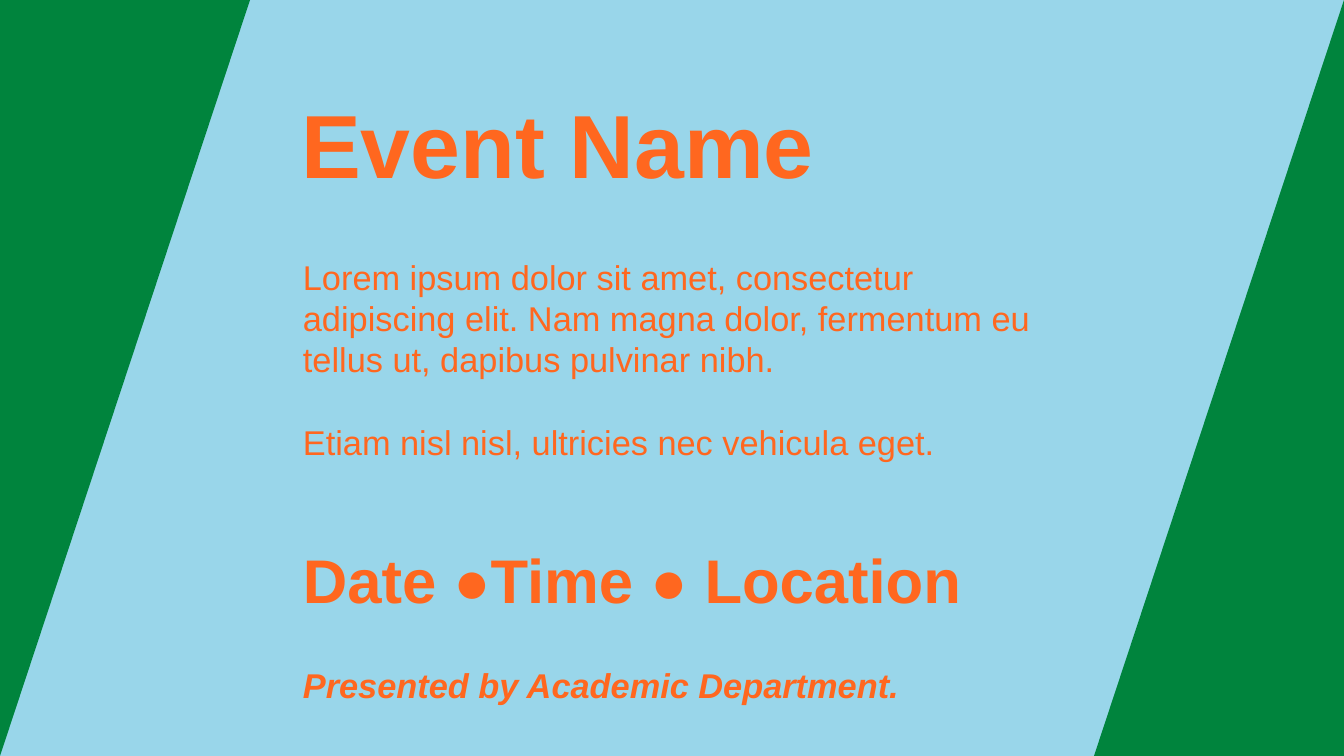
from dataclasses import dataclass

from pptx import Presentation
from pptx.dml.color import RGBColor
from pptx.enum.shapes import MSO_SHAPE
from pptx.enum.text import MSO_AUTO_SIZE
from pptx.util import Cm, Pt

TRIANGLE = MSO_SHAPE.RIGHT_TRIANGLE
GROW = MSO_AUTO_SIZE.SHAPE_TO_FIT_TEXT
SLIDE_W, SLIDE_H = 50.8, 28.58
CORNER_W = 9.45
LEFT = 11.2


@dataclass(frozen=True)
class Theme:
    sky: RGBColor = RGBColor(0x99, 0xD6, 0xEA)
    green: RGBColor = RGBColor(0x00, 0x84, 0x3D)
    orange: RGBColor = RGBColor(0xFF, 0x67, 0x1F)
    font: str = "Arial"
    title: float = 96
    details: float = 66
    body: float = 36.8
    leading: float = 1.2


THEME = Theme()


@dataclass(frozen=True)
class TextBlock:
    left: float
    top: float
    width: float
    height: float
    size: float
    paragraphs: tuple[str, ...]
    bold: bool = False
    italic: bool = False


BLOCKS = (
    TextBlock(11.13, 3.23, 23.72, 4.37, THEME.title, ("Event Name",), bold=True),
    TextBlock(LEFT, 9.55, 28.37, 8.13, THEME.body, (
        "Lorem ipsum dolor sit amet, consectetur adipiscing elit. "
        "Nam magna dolor, fermentum eu tellus ut, dapibus pulvinar nibh.",
        "Etiam nisl nisl, ultricies nec vehicula eget.",
    )),
    TextBlock(LEFT, 20.37, 29.59, 5.89, THEME.details,
              ("Date ●Time ● Location",), bold=True),
    TextBlock(LEFT, 24.99, 23.62, 3.02, THEME.body,
              ("Presented by Academic Department.",), bold=True, italic=True),
)


def add_corner(s, center_x: float, rotation: int) -> None:
    sp = s.shapes.add_shape(
        TRIANGLE, Cm(center_x - SLIDE_H / 2), Cm((SLIDE_H - CORNER_W) / 2),
        Cm(SLIDE_H), Cm(CORNER_W))
    sp.rotation = rotation
    sp.shadow.inherit = False
    sp.fill.solid()
    sp.fill.fore_color.rgb = THEME.green
    sp.line.fill.background()


def add_text(s, block: TextBlock) -> None:
    sp = s.shapes.add_textbox(
        Cm(block.left), Cm(block.top), Cm(block.width), Cm(block.height))
    tf = sp.text_frame
    tf.word_wrap = True
    tf.auto_size = GROW
    line_height = Pt(block.size * THEME.leading)
    font_format = {"name": THEME.font, "size": Pt(block.size),
                   "bold": block.bold, "italic": block.italic}
    for i, text in enumerate(block.paragraphs):
        p = tf.add_paragraph() if i else tf.paragraphs[0]
        p.line_spacing = line_height
        p.space_before = line_height if i else Pt(0)
        r = p.add_run()
        r.text = text
        for name, value in font_format.items():
            setattr(r.font, name, value)
        r.font.color.rgb = THEME.orange


def main() -> None:
    prs = Presentation()
    prs.slide_width, prs.slide_height = Cm(SLIDE_W), Cm(SLIDE_H)
    s = prs.slides.add_slide(prs.slide_layouts[6])
    s.background.fill.solid()
    s.background.fill.fore_color.rgb = THEME.sky
    add_corner(s, CORNER_W / 2, 90)
    for block in BLOCKS:
        add_text(s, block)
    add_corner(s, SLIDE_W - CORNER_W / 2, 270)
    prs.save("out.pptx")


if __name__ == "__main__":
    main()
